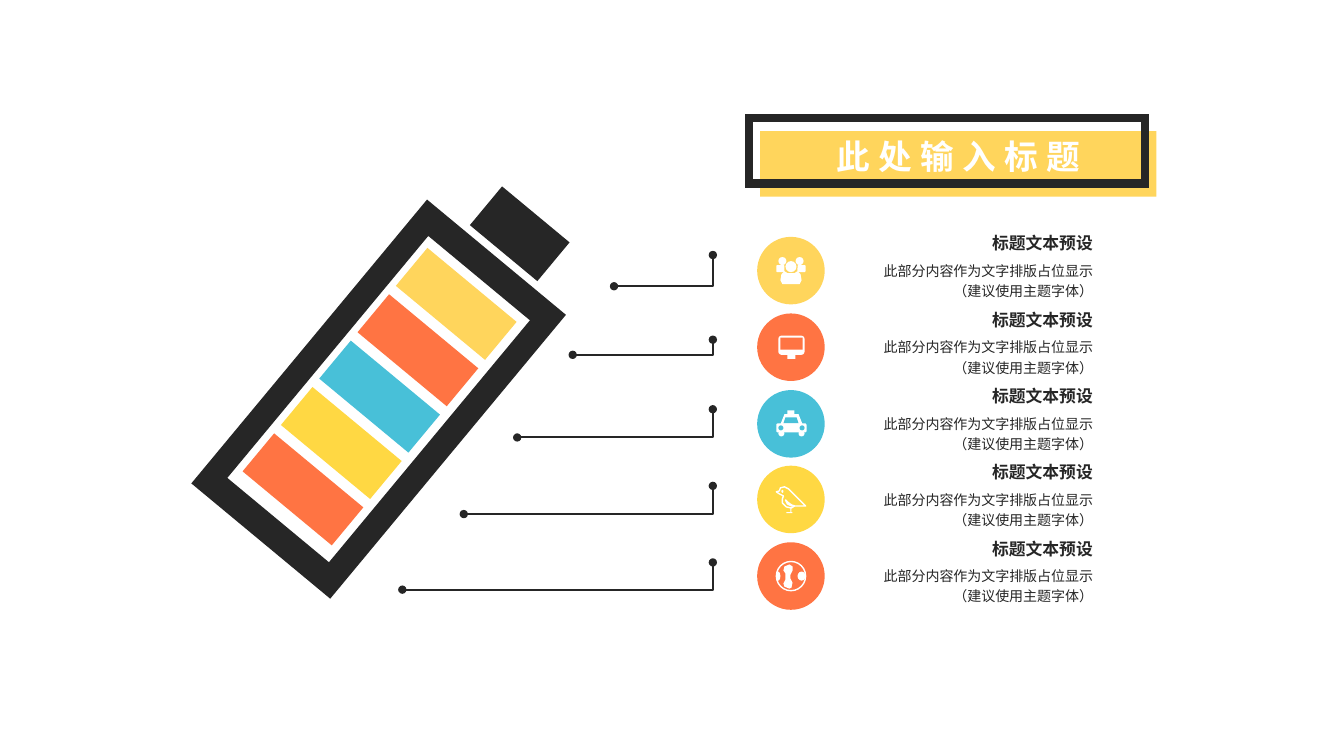
import pptx
import pptx.dml.color
import pptx.enum.shapes
import pptx.enum.text
import pptx.oxml.ns
import pptx.util
from lxml import etree

PX = 9144  # EMU in one px, 100 px to the inch

RGB = pptx.dml.color.RGBColor
DARK = RGB(0x26, 0x26, 0x26)
WHITE = RGB(0xFF, 0xFF, 0xFF)
AMBER = RGB(0xFF, 0xD5, 0x5C)
ORANGE = RGB(0xFF, 0x74, 0x43)
BLUE = RGB(0x48, 0xC0, 0xD8)
YELLOW = RGB(0xFF, 0xD8, 0x43)
LEVELS = [AMBER, ORANGE, BLUE, YELLOW, ORANGE]

KIND = pptx.enum.shapes.MSO_SHAPE
RECT, OVAL, ROUND = KIND.RECTANGLE, KIND.OVAL, KIND.ROUNDED_RECTANGLE
ALIGN = pptx.enum.text.PP_ALIGN
TILT = 39.7

# Left, top and bottom of each leader; all turn up at the same right edge
LEADER_RIGHT = 707
LEADERS = [(609, 253, 284), (568, 337, 352), (513, 406, 434),
           (460, 482, 510), (399, 558, 585)]

# Icon parts, measured from the corner of their disc:
# (preset, box, style) or (None, points, style)
ICONS = [
    # People
    [(OVAL, (21, 20, 8, 8), "solid"), (OVAL, (38, 20, 8, 8), "solid"),
     (OVAL, (28, 24, 11, 11), "solid"), (ROUND, (19, 28, 8, 7), "solid"),
     (ROUND, (40, 28, 8, 7), "solid"),
     (None, [(27, 34), (30, 36), (37, 36), (40, 34), (43, 37), (44, 43),
             (42, 47), (25, 47), (23, 43), (24, 37)], "solid")],
    # Monitor
    [(ROUND, (21, 22, 26, 19), "solid"), (RECT, (23, 24, 22, 12), "hole"),
     (RECT, (30, 41, 8, 4), "solid")],
    # Taxi
    [(RECT, (30, 20, 7, 5), "solid"),
     (None, [(27, 24), (41, 24), (45, 34), (23, 34)], "solid"),
     (None, [(28, 27), (39, 27), (41, 33), (26, 33)], "hole"),
     (ROUND, (19, 33, 30, 9), "solid"), (OVAL, (21, 40, 6, 6), "solid"),
     (OVAL, (41, 40, 6, 6), "solid"), (OVAL, (21, 35, 5, 5), "hole"),
     (OVAL, (42, 35, 5, 5), "hole")],
    # Bird
    [(None, [(19, 26), (22, 25), (23, 22), (27, 21), (31, 23), (48, 40),
             (37, 40), (34, 42), (29, 41), (25, 37), (25, 33), (26, 30),
             (22, 28)], "outline"),
     (OVAL, (24, 24, 2, 3), "solid"),
     (None, [(28, 34), (30, 38), (34, 40), (37, 40), (34, 39), (30, 36)],
      "outline"),
     (RECT, (33, 42, 1, 4), "solid"), (RECT, (29, 46, 6, 1), "solid")],
    # Globe
    [(OVAL, (19, 19, 29, 29), "outline"), (OVAL, (40, 29, 8, 9), "solid"),
     (OVAL, (19, 29, 4, 9), "solid"),
     (None, [(32, 22), (35, 24), (35, 28), (33, 32), (33, 36), (35, 40),
             (34, 45), (32, 46), (27, 44), (26, 41), (28, 37), (28, 31),
             (26, 28), (27, 24)], "solid")],
]


def px(*lengths):
    return [round(length * PX) for length in lengths]


def paint(shape, fill=None, line=None, width=1.0, rotation=0):
    shape.shadow.inherit = False
    shape.rotation = rotation
    if fill is None:
        shape.fill.background()
    else:
        shape.fill.solid()
        shape.fill.fore_color.rgb = fill
    if line is None:
        shape.line.fill.background()
    else:
        shape.line.color.rgb = line
        shape.line.width = pptx.util.Pt(width)
    return shape


def add_preset(slide, kind, box, **look):
    return paint(slide.shapes.add_shape(kind, *px(*box)), **look)


def add_outline(slide, contours, closed=True, **look):
    builder = slide.shapes.build_freeform(*contours[0][0], scale=PX)
    for number, points in enumerate(contours):
        if number:
            builder.move_to(*points[0])
        builder.add_line_segments(points[1:], close=closed)
    return paint(builder.convert_to_shape(), **look)


def add_line_detail(shape, tag, **attributes):
    line = shape.line._get_or_add_ln()
    etree.SubElement(line, pptx.oxml.ns.qn(tag), attributes)


def write(frame, text, size=10, color=DARK, bold=False, align=ALIGN.RIGHT,
          leading=1.0, tracking=0, insets=(8, 0, 8, 0)):
    frame.word_wrap = True
    frame.auto_size = pptx.enum.text.MSO_AUTO_SIZE.NONE
    frame.vertical_anchor = pptx.enum.text.MSO_ANCHOR.TOP
    (frame.margin_left, frame.margin_top,
     frame.margin_right, frame.margin_bottom) = px(*insets)
    paragraph = frame.paragraphs[0]
    paragraph.text = text
    paragraph.alignment = align
    paragraph.line_spacing = leading
    for run in paragraph.runs:
        run.font.name = "Arial"
        run.font.size = pptx.util.Pt(size)
        run.font.bold = bold
        run.font.color.rgb = color
        if tracking:
            run.font._element.set("spc", str(tracking * 100))


def add_title(slide):
    banner = slide.shapes.title
    banner.left, banner.top, banner.width, banner.height = px(754, 130, 393, 65)
    banner.fill.solid()
    banner.fill.fore_color.rgb = AMBER
    write(banner.text_frame, "此处输入标题", size=24, color=WHITE, bold=True,
          align=ALIGN.CENTER, tracking=6, insets=(10, 5, 10, 5))
    frame = add_preset(slide, RECT, (743, 117, 393, 65), line=DARK, width=6)
    add_line_detail(frame, "a:miter", lim="800000")


def corners(left, top, width, height):
    right, bottom = left + width, top + height
    return [(left, top), (right, top), (right, bottom), (left, bottom)]


def add_battery(slide):
    casing = [corners(286, 213, 179, 366), corners(310, 240, 131, 312)[::-1]]
    add_outline(slide, casing, fill=DARK, rotation=TILT)
    add_preset(slide, RECT, (472, 207, 87, 50), fill=DARK, rotation=TILT)
    for row, color in enumerate(LEVELS):
        add_preset(slide, RECT, (395 - 38 * row, 277 + 46 * row, 115, 49),
                   fill=color, rotation=TILT)


def add_leader(slide, left, top, bottom):
    bend = [(LEADER_RIGHT, top), (LEADER_RIGHT, bottom), (left, bottom)]
    leader = add_outline(slide, [bend], closed=False, line=DARK, width=1.5)
    for end in ("a:headEnd", "a:tailEnd"):
        add_line_detail(leader, end, type="oval")


def add_icon(slide, parts, left, top, color):
    looks = {"solid": {"fill": WHITE}, "hole": {"fill": color},
             "outline": {"line": WHITE, "width": 1}}
    for kind, geometry, style in parts:
        if kind is None:
            points = [(left + x, top + y) for x, y in geometry]
            add_outline(slide, [points], **looks[style])
        else:
            x, y, width, height = geometry
            add_preset(slide, kind, (left + x, top + y, width, height),
                       **looks[style])


def add_entry(slide, top, color, icon):
    add_preset(slide, OVAL, (751, top, 67, 67), fill=color)
    add_icon(slide, icon, 751, top, color)
    heading = slide.shapes.add_textbox(*px(838, top - 4, 254, 26))
    write(heading.text_frame, "标题文本预设", size=12, bold=True)
    details = slide.shapes.add_textbox(*px(838, top + 22, 254, 50))
    write(details.text_frame,
          "此部分内容作为文字排版占位显示\v（建议使用主题字体）", leading=1.2)


def main():
    deck = pptx.Presentation()
    deck.slide_width, deck.slide_height = px(1333, 750)
    slide = deck.slides.add_slide(deck.slide_layouts[5])

    add_title(slide)
    add_battery(slide)
    # One row for each battery level
    for row, (color, icon, leader) in enumerate(zip(LEVELS, ICONS, LEADERS)):
        add_leader(slide, *leader)
        add_entry(slide, round(235 + 75.8 * row), color, icon)

    deck.save("out.pptx")


if __name__ == "__main__":
    main()
